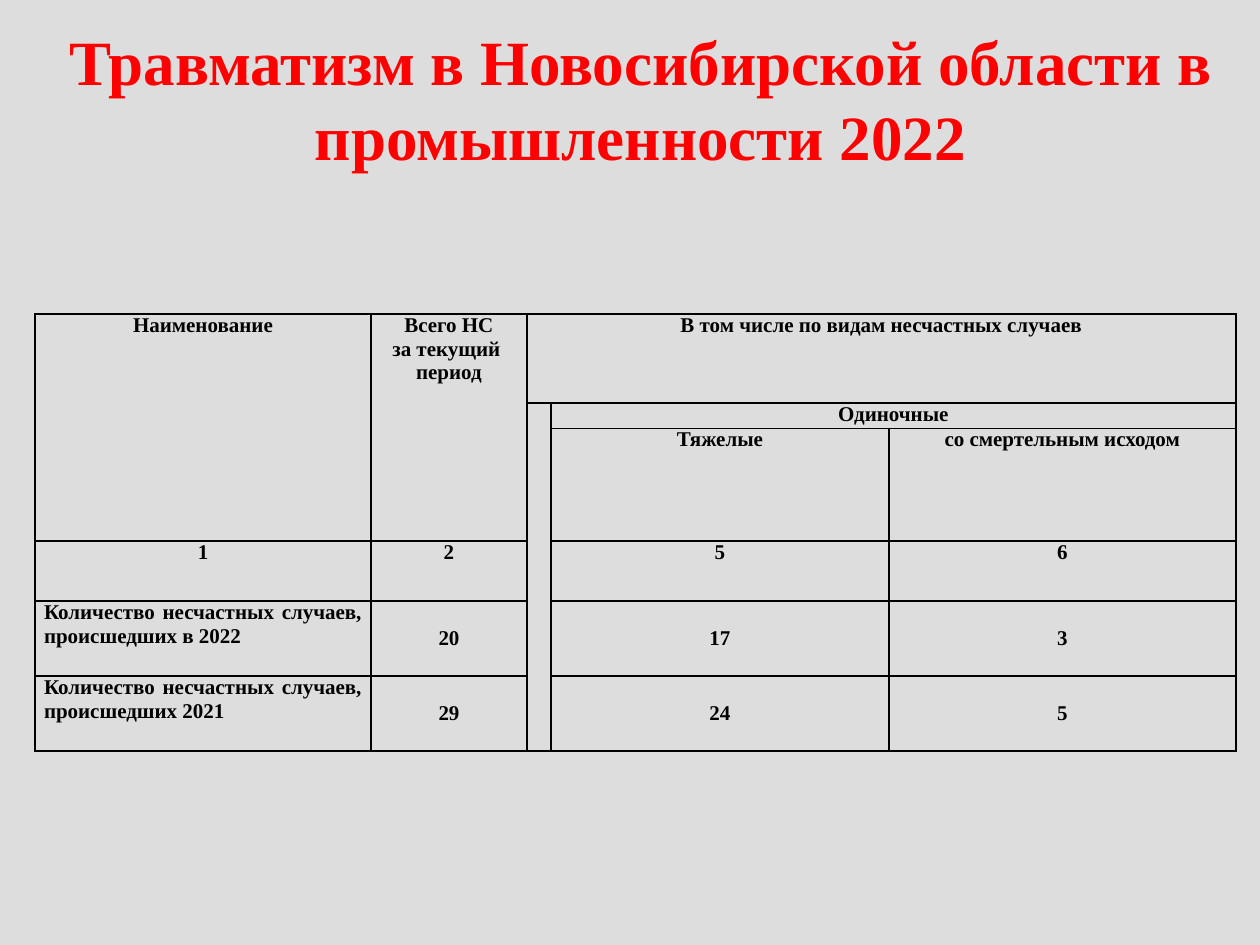
from dataclasses import dataclass

from lxml import etree
from pptx import Presentation
from pptx import util as u
from pptx.dml.color import RGBColor
from pptx.enum import text as t
from pptx.oxml.ns import qn

PX = u.Inches(1) // 126


@dataclass(frozen=True)
class Theme:
    font: str = "Times New Roman"
    background: str = "DDDDDD"
    title: str = "FF0000"
    ink: str = "000000"
    title_pt: int = 36
    body_pt: int = 12
    border_pt: int = 1


@dataclass(frozen=True)
class Entry:
    """Table cell: position, wording, rows and columns covered."""
    row: int
    col: int
    text: str
    rows: int = 1
    cols: int = 1
    align: t.PP_ALIGN = t.PP_ALIGN.CENTER
    anchor: t.MSO_ANCHOR = t.MSO_ANCHOR.TOP


THEME = Theme()
COLUMN_WIDTHS = [336, 156, 24, 338, 347]
ROW_HEIGHTS = [89, 25, 113, 60, 75, 75]

HEADINGS = [
    Entry(0, 0, "Наименование", rows=3),
    Entry(0, 1, "Всего НС\nза текущий \nпериод", rows=3),
    Entry(0, 2, "В том числе по видам несчастных случаев", cols=3),
    Entry(1, 2, "", rows=5),
    Entry(1, 3, "Одиночные", cols=2),
    Entry(2, 3, "Тяжелые"),
    Entry(2, 4, "со смертельным исходом"),
]
VALUE_COLUMNS = [1, 3, 4]
COLUMN_NUMBERS = [Entry(3, col, number) for col, number in zip([0, *VALUE_COLUMNS], "1256")]
ACCIDENTS = [
    ("Количество несчастных случаев, происшедших в 2022", [20, 17, 3]),
    ("Количество несчастных случаев, происшедших 2021", [29, 24, 5]),
]


def write(frame, content: str, *, size: int, color: str, align=t.PP_ALIGN.CENTER) -> None:
    for index, line in enumerate(content.split("\n")):
        paragraph = frame.add_paragraph() if index else frame.paragraphs[0]
        paragraph.alignment = align
        run = paragraph.add_run()
        run.text = line
        run.font.name = THEME.font
        run.font.size = u.Pt(size)
        run.font.bold = True
        run.font.color.rgb = RGBColor.from_string(color)


def add_borders(cell) -> None:
    properties = cell._tc.get_or_add_tcPr()
    for side in ("lnL", "lnR", "lnT", "lnB"):
        line = etree.SubElement(properties, qn(f"a:{side}"), w=str(u.Pt(THEME.border_pt)))
        fill = etree.SubElement(line, qn("a:solidFill"))
        etree.SubElement(fill, qn("a:srgbClr"), val=THEME.ink)


def fill_entry(table, entry: Entry) -> None:
    cell = table.cell(entry.row, entry.col)
    if entry.rows > 1 or entry.cols > 1:
        cell.merge(table.cell(entry.row + entry.rows - 1, entry.col + entry.cols - 1))
    cell.vertical_anchor = entry.anchor
    write(cell.text_frame, entry.text, size=THEME.body_pt, color=THEME.ink, align=entry.align)


def add_title(slide, content: str) -> None:
    title = slide.shapes.title
    title.left, title.top, title.width, title.height = (n * PX for n in (35, 16, 1211, 165))
    title.fill.solid()
    title.fill.fore_color.rgb = RGBColor.from_string(THEME.background)
    title.text_frame.vertical_anchor = t.MSO_ANCHOR.TOP
    title.text_frame.auto_size = t.MSO_AUTO_SIZE.SHAPE_TO_FIT_TEXT
    write(title.text_frame, content, size=THEME.title_pt, color=THEME.title)


def add_accident_table(slide, entries: list[Entry]) -> None:
    table = slide.shapes.add_table(
        len(ROW_HEIGHTS), len(COLUMN_WIDTHS), 35 * PX, 314 * PX,
        sum(COLUMN_WIDTHS) * PX, sum(ROW_HEIGHTS) * PX).table
    table.first_row = table.horz_banding = False
    for column, width in zip(table.columns, COLUMN_WIDTHS):
        column.width = width * PX
    for row, height in zip(table.rows, ROW_HEIGHTS):
        row.height = height * PX
    for cell in table.iter_cells():
        cell.margin_left = cell.margin_right = 9 * PX
        cell.margin_top = cell.margin_bottom = 0
        add_borders(cell)
        cell.fill.background()
    for entry in entries:
        fill_entry(table, entry)


def main() -> None:
    presentation = Presentation()
    presentation.slide_width, presentation.slide_height = u.Inches(10), u.Inches(7.5)
    slide = presentation.slides.add_slide(presentation.slide_layouts[5])
    slide.background.fill.solid()
    slide.background.fill.fore_color.rgb = RGBColor.from_string(THEME.background)

    # Heading
    add_title(slide, "Травматизм в Новосибирской области в промышленности 2022")

    # Accident counts by year
    entries = HEADINGS + COLUMN_NUMBERS
    for row, (label, counts) in enumerate(ACCIDENTS, start=4):
        entries.append(Entry(row, 0, label, align=t.PP_ALIGN.JUSTIFY))
        entries += [Entry(row, col, str(count), anchor=t.MSO_ANCHOR.MIDDLE)
                    for col, count in zip(VALUE_COLUMNS, counts)]
    add_accident_table(slide, entries)

    presentation.save("out.pptx")


if __name__ == "__main__":
    main()
